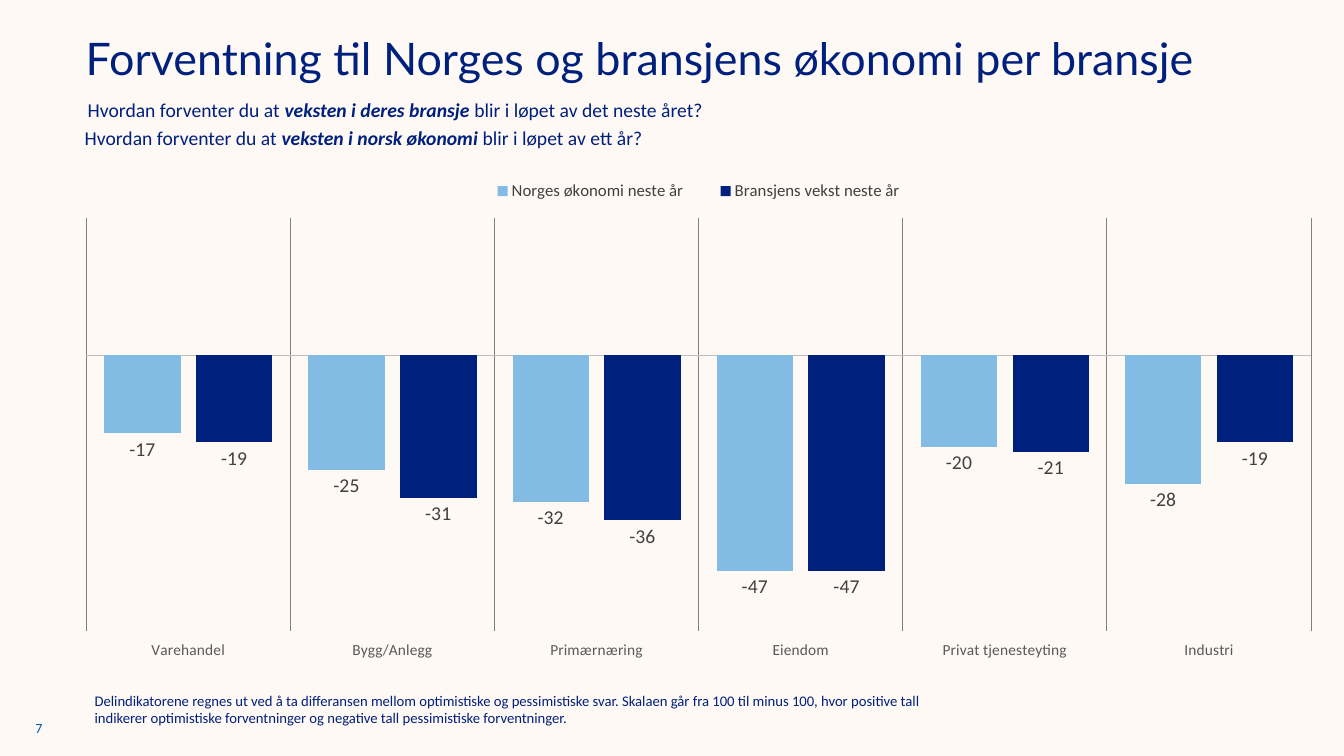
from lxml import etree
from pptx import Presentation
from pptx.chart.data import CategoryChartData
from pptx.dml.color import RGBColor
from pptx.enum.chart import XL_CHART_TYPE as ChartType
from pptx.enum.chart import XL_LABEL_POSITION as LabelPosition
from pptx.enum.chart import XL_LEGEND_POSITION as LegendPosition
from pptx.enum.chart import XL_TICK_LABEL_POSITION as TickLabelPosition
from pptx.enum.chart import XL_TICK_MARK as TickMark
from pptx.enum.text import MSO_ANCHOR as Anchor
from pptx.enum.text import MSO_AUTO_SIZE as AutoSize
from pptx.oxml.ns import qn
from pptx.util import Inches, Pt

NAVY = "00207D"
SKY = "82BCE5"
DARK_GRAY = "404040"

INDUSTRIES = ["Varehandel", "Bygg/Anlegg", "Primærnæring", "Eiendom",
              "Privat tjenesteyting", "Industri"]
SERIES = [
    ("Norges økonomi neste år", [-17, -25, -32, -47, -20, -28], SKY),
    ("Bransjens vekst neste år", [-19, -31, -36, -47, -21, -19], NAVY),
]
FOOTNOTE = (
    "Delindikatorene regnes ut ved å ta differansen mellom optimistiske og "
    "pessimistiske svar. Skalaen går fra 100 til minus 100, hvor positive tall "
    "indikerer optimistiske forventninger og negative tall pessimistiske "
    "forventninger."
)


def color(code):
    return RGBColor.from_string(code)


def style_font(font, size, code, name="Calibri"):
    font.size = Pt(size)
    font.name = name
    font.color.rgb = color(code)


def style_line(line, code):
    line.color.rgb = color(code)
    line.width = Pt(0.75)


def add_text(page, place, pieces, size, code=NAVY, name="Calibri", inset=0):
    box = page.shapes.add_textbox(*map(Inches, place))
    frame = box.text_frame
    frame.word_wrap = True
    frame.margin_left = frame.margin_right = Inches(inset)
    frame.margin_top = frame.margin_bottom = Inches(inset / 2)
    for words, emphasized in pieces:
        span = frame.paragraphs[0].add_run()
        span.text = words
        style_font(span.font, size, code, name)
        span.font.bold = span.font.italic = emphasized
    return frame


def add_question(page, place, topic, ending):
    pieces = [("Hvordan forventer du at ", False), (topic, True), (ending, False)]
    add_text(page, place, pieces, 14)


def set_layout(parent, index, place, inner=False):
    for old in parent.findall(qn("c:layout")):
        parent.remove(old)
    layout = etree.Element(qn("c:layout"))
    manual = etree.SubElement(layout, qn("c:manualLayout"))
    settings = [("layoutTarget", "inner")] if inner else []
    settings += [("xMode", "edge"), ("yMode", "edge")]
    settings += zip("xywh", place)
    for tag, value in settings:
        etree.SubElement(manual, qn(f"c:{tag}")).set("val", str(value))
    parent.insert(index, layout)


def style_axes(chart):
    industries = chart.category_axis
    industries.tick_label_position = TickLabelPosition.LOW
    industries.major_tick_mark = industries.minor_tick_mark = TickMark.NONE
    style_font(industries.tick_labels.font, 11, "595959")
    style_line(industries.format.line, "BFBFBF")
    industries.has_major_gridlines = True
    style_line(industries.major_gridlines.format.line, "808080")

    scale = chart.value_axis
    scale.minimum_scale, scale.maximum_scale = -60, 30
    scale.major_unit = 20
    scale.has_major_gridlines = False
    scale.visible = False


def style_series(series, code):
    series.invert_if_negative = False
    series.format.fill.solid()
    series.format.fill.fore_color.rgb = color(code)
    labels = series.data_labels
    labels.show_value = True
    labels.position = LabelPosition.OUTSIDE_END
    labels.number_format = "0"
    labels.number_format_is_linked = False
    style_font(labels.font, 14, DARK_GRAY)


def add_expectations_chart(page):
    data = CategoryChartData(number_format="0")
    data.categories = INDUSTRIES
    for name, values, _ in SERIES:
        data.add_series(name, values)
    place = map(Inches, (0.85, 1.7, 12.16, 4.89))
    chart = page.shapes.add_chart(ChartType.COLUMN_CLUSTERED, *place, data).chart
    style_font(chart.font, 8, "000000")
    chart.has_title = False
    style_axes(chart)

    plot = chart.plots[0]
    plot.gap_width, plot.overlap = 47, -20
    plot.vary_by_categories = False
    for series, (_, _, code) in zip(plot.series, SERIES):
        style_series(series, code)

    chart.has_legend = True
    legend = chart.legend
    legend.position = LegendPosition.LEFT
    legend.include_in_layout = False
    style_font(legend.font, 12, DARK_GRAY)

    chart_root = chart.element
    set_layout(chart_root.find(".//" + qn("c:plotArea")), 0,
               (0, 0.094, 1, 0.838), inner=True)
    set_layout(chart_root.find(".//" + qn("c:legend")), 1,
               (0.31, 0.01, 0.38, 0.06))


def main():
    deck = Presentation()
    deck.slide_width, deck.slide_height = Inches(13.33), Inches(7.5)
    page = deck.slides.add_slide(deck.slide_layouts[6])
    page.background.fill.solid()
    page.background.fill.fore_color.rgb = color("FFF9F5")

    add_expectations_chart(page)
    footnote = add_text(page, (0.84, 6.81, 8.73, 0.45), [(FOOTNOTE, False)],
                        10.5, inset=0.1)
    footnote.auto_size = AutoSize.SHAPE_TO_FIT_TEXT
    title = add_text(
        page, (0.85, 0.37, 11.62, 0.44),
        [("Forventning til Norges og bransjens økonomi per bransje", False)],
        32, name="Lato")
    title.paragraphs[0].line_spacing = 0.9
    add_question(page, (0.84, 1.25, 10, 0.31), "veksten i norsk økonomi ",
                 "blir i løpet av ett år?")
    add_question(page, (0.87, 0.97, 12.9, 0.29), "veksten i deres bransje ",
                 "blir i løpet av det neste året?")
    number = add_text(page, (0.35, 7.14, 0.52, 0.17), [("7", False)], 10, "005AA4")
    number.vertical_anchor = Anchor.MIDDLE
    deck.save("out.pptx")


if __name__ == "__main__":
    main()
